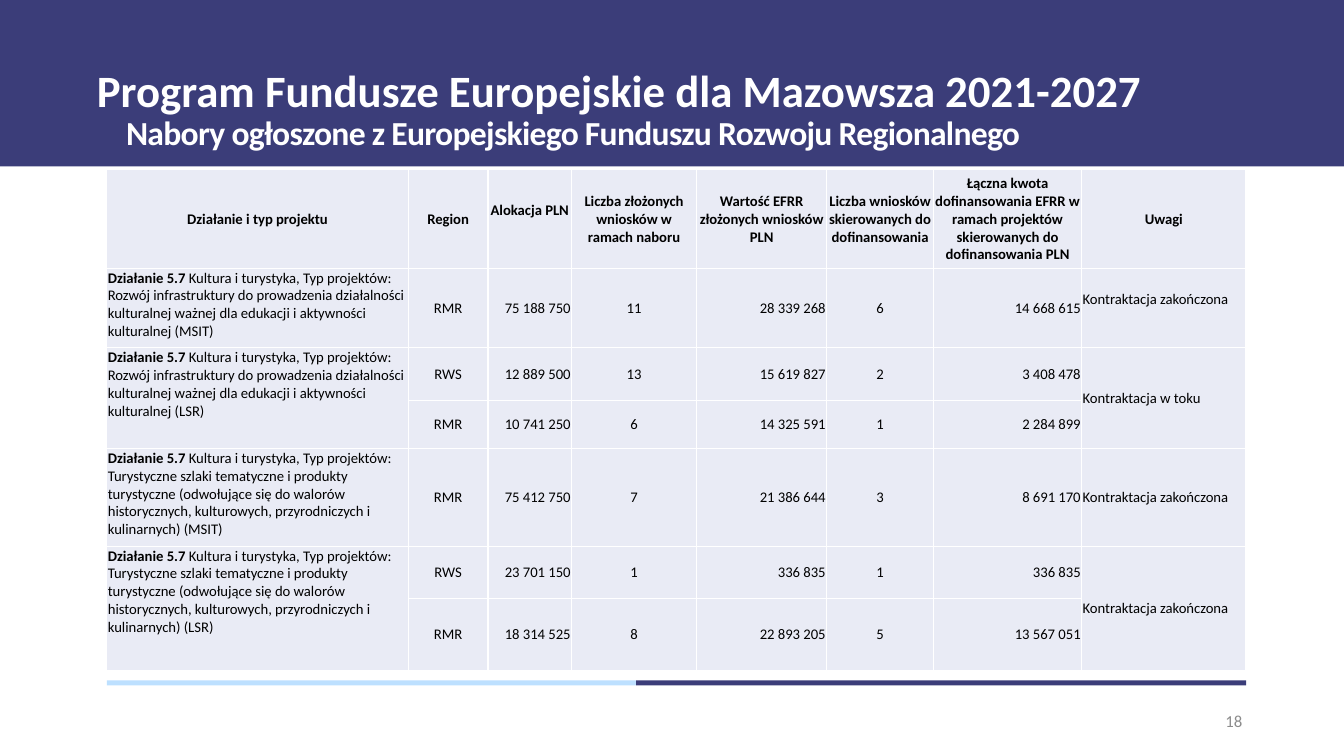
from lxml.etree import SubElement
from pptx import Presentation
from pptx.dml.color import RGBColor
from pptx.enum.shapes import MSO_SHAPE
from pptx.enum.text import MSO_ANCHOR, MSO_AUTO_SIZE, PP_ALIGN
from pptx.oxml.ns import qn
from pptx.util import Inches, Pt

COLORS = {"navy": "3B3D79", "sky": "BDE0FF", "cell": "E9EBF5",
          "white": "FFFFFF", "black": "000000", "gray": "8C8C8C"}
LEFT, CENTER, RIGHT = PP_ALIGN.LEFT, PP_ALIGN.CENTER, PP_ALIGN.RIGHT

COLUMN_WIDTHS = [2.99, 0.79, 0.83, 1.24, 1.29, 1.06, 1.47, 1.63]
ROW_HEIGHTS = [0.98, 0.79, 0.52, 0.48, 0.97, 0.52, 0.71]
COLUMN_ALIGNS = [LEFT, CENTER, RIGHT, CENTER, RIGHT, CENTER, RIGHT, LEFT]
HEADERS = ["Działanie i typ projektu", "Region", "Alokacja PLN",
           "Liczba złożonych wniosków w ramach naboru",
           "Wartość EFRR złożonych wniosków\nPLN",
           "Liczba wniosków skierowanych do dofinansowania",
           "Łączna kwota dofinansowania EFRR w ramach projektów "
           "skierowanych do dofinansowania PLN", "Uwagi"]
ACTION = "Działanie 5.7 "
KIND = "Kultura i turystyka, Typ projektów: "
CULTURE = KIND + ("Rozwój infrastruktury do prowadzenia działalności kulturalnej "
                  "ważnej dla edukacji i aktywności kulturalnej ")
TRAILS = KIND + ("Turystyczne szlaki tematyczne i produkty turystyczne (odwołujące się do "
                 "walorów historycznych, kulturowych, przyrodniczych i kulinarnych) ")
DONE, ONGOING = "Kontraktacja zakończona", "Kontraktacja w toku"
# Each call: project type, remark, then one row of values per region
CALLS = [
    (CULTURE + "(MSIT)", DONE,
     [("RMR", "75 188 750", "11", "28 339 268", "6", "14 668 615")]),
    (CULTURE + "(LSR)", ONGOING,
     [("RWS", "12 889 500", "13", "15 619 827", "2", "3 408 478"),
      ("RMR", "10 741 250", "6", "14 325 591", "1", "2 284 899")]),
    (TRAILS + "(MSIT)", DONE,
     [("RMR", "75 412 750", "7", "21 386 644", "3", "8 691 170")]),
    (TRAILS + "(LSR)", DONE,
     [("RWS", "23 701 150", "1", "336 835", "1", "336 835"),
      ("RMR", "18 314 525", "8", "22 893 205", "5", "13 567 051")]),
]


def rgb(name):
    return RGBColor.from_string(COLORS[name])


def place(shape, left, top, width, height):
    shape.left, shape.top = Inches(left), Inches(top)
    shape.width, shape.height = Inches(width), Inches(height)


def add_text(para, text, size=10.5, color="black", bold=False, align=LEFT, spacing=None):
    """Append formatted text to a paragraph; a newline becomes a line break."""
    para.alignment = align
    for number, line in enumerate(text.split("\n")):
        if number:
            para.add_line_break()
        span = para.add_run()
        span.text = line
        font = span.font
        font.name, font.size, font.bold = "Calibri", Pt(size), bold
        font.color.rgb = rgb(color)
        if spacing is not None:
            span._r.get_or_add_rPr().set("spc", str(int(spacing * 100)))


def add_bar(page, left, top, width, height, color):
    bar = page.shapes.add_shape(MSO_SHAPE.RECTANGLE, Inches(left), Inches(top),
                                Inches(width), Inches(height))
    bar.shadow.inherit = False
    bar.fill.solid()
    bar.fill.fore_color.rgb = rgb(color)
    bar.line.fill.background()
    return bar


def add_heading(page, left, top, width, height):
    band = add_bar(page, left, top, width, height, "navy")
    page.shapes._spTree.insert(2, band._element)

    title, subtitle = page.shapes.title, page.placeholders[1]
    place(title, left + 0.86, top + 0.2, 11.5, height - 0.2)
    place(subtitle, left + 1.15, top + 1.06, 11.5, 0.63)
    for shape, anchor in ((title, MSO_ANCHOR.MIDDLE), (subtitle, MSO_ANCHOR.TOP)):
        shape.text_frame.auto_size = MSO_AUTO_SIZE.NONE
        shape.text_frame.vertical_anchor = anchor
        shape.text_frame.word_wrap = True

    para = title.text_frame.paragraphs[0]
    para.line_spacing = 0.9
    add_text(para, "Program Fundusze Europejskie dla Mazowsza 2021-2027",
             size=32, color="white", bold=True)

    para = subtitle.text_frame.paragraphs[0]
    properties = para._p.get_or_add_pPr()
    properties.set("marL", "0")
    properties.set("indent", "0")
    SubElement(properties, qn("a:buNone"))
    para.space_before = Pt(0)
    add_text(para, "Nabory ogłoszone z Europejskiego Funduszu Rozwoju Regionalnego",
             size=24, color="white", bold=True, spacing=-0.5)


def style_cell(cell):
    properties = cell._tc.get_or_add_tcPr()
    for side in ("lnL", "lnR", "lnT", "lnB"):
        border = SubElement(properties, qn("a:" + side), w=str(Pt(1)))
        fill = SubElement(border, qn("a:solidFill"))
        SubElement(fill, qn("a:srgbClr"), val=COLORS["white"])
    cell.fill.solid()
    cell.fill.fore_color.rgb = rgb("cell")
    cell.vertical_anchor = MSO_ANCHOR.MIDDLE
    cell.margin_left = cell.margin_right = cell.margin_top = Inches(0.01)
    cell.margin_bottom = 0


def add_calls_table(page, left, top, width, height):
    table = page.shapes.add_table(len(ROW_HEIGHTS), len(COLUMN_WIDTHS), Inches(left),
                                  Inches(top), Inches(width), Inches(height)).table
    for column, column_width in zip(table.columns, COLUMN_WIDTHS):
        column.width = Inches(column_width)
    for row, row_height in zip(table.rows, ROW_HEIGHTS):
        row.height = Inches(row_height)
    for cell in table.iter_cells():
        style_cell(cell)

    def write(row, column, text, **style):
        add_text(table.cell(row, column).text_frame.paragraphs[0], text, **style)

    for column, header in enumerate(HEADERS):
        write(0, column, header, bold=True, align=CENTER)

    remarks = len(HEADERS) - 1
    first = 1
    for project, remark, regions in CALLS:
        last = first + len(regions) - 1
        if last > first:
            for column in (0, remarks):
                table.cell(first, column).merge(table.cell(last, column))
        table.cell(first, 0).vertical_anchor = MSO_ANCHOR.TOP
        write(first, 0, ACTION, bold=True)
        write(first, 0, project)
        write(first, remarks, remark)
        for row, values in enumerate(regions, first):
            for column, value in enumerate(values, 1):
                write(row, column, value, align=COLUMN_ALIGNS[column])
        first = last + 1

    # These two cells sit half a line above the middle
    for row, column in ((0, 2), (1, remarks)):
        table.cell(row, column).margin_bottom = Inches(0.18)


def add_footer(page, left, top, width):
    split = 5.25
    add_bar(page, left, top, split, 0.05, "sky")
    add_bar(page, left + split, top, width - split, 0.05, "navy")
    box = page.shapes.add_textbox(Inches(left + width - 2.94), Inches(top + 0.2),
                                  Inches(3), Inches(0.4))
    box.text_frame.word_wrap = True
    box.text_frame.vertical_anchor = MSO_ANCHOR.MIDDLE
    add_text(box.text_frame.paragraphs[0], "18", size=12, color="gray", align=RIGHT)


def main():
    deck = Presentation()
    deck.slide_width, deck.slide_height = Inches(13.33), Inches(7.5)
    page = deck.slides.add_slide(deck.slide_layouts[1])
    add_heading(page, 0, 0, 13.33, 1.65)
    add_calls_table(page, 1.06, 1.68, 11.3, 4.97)
    add_footer(page, 1.06, 6.75, 11.3)
    deck.save("out.pptx")


if __name__ == "__main__":
    main()
